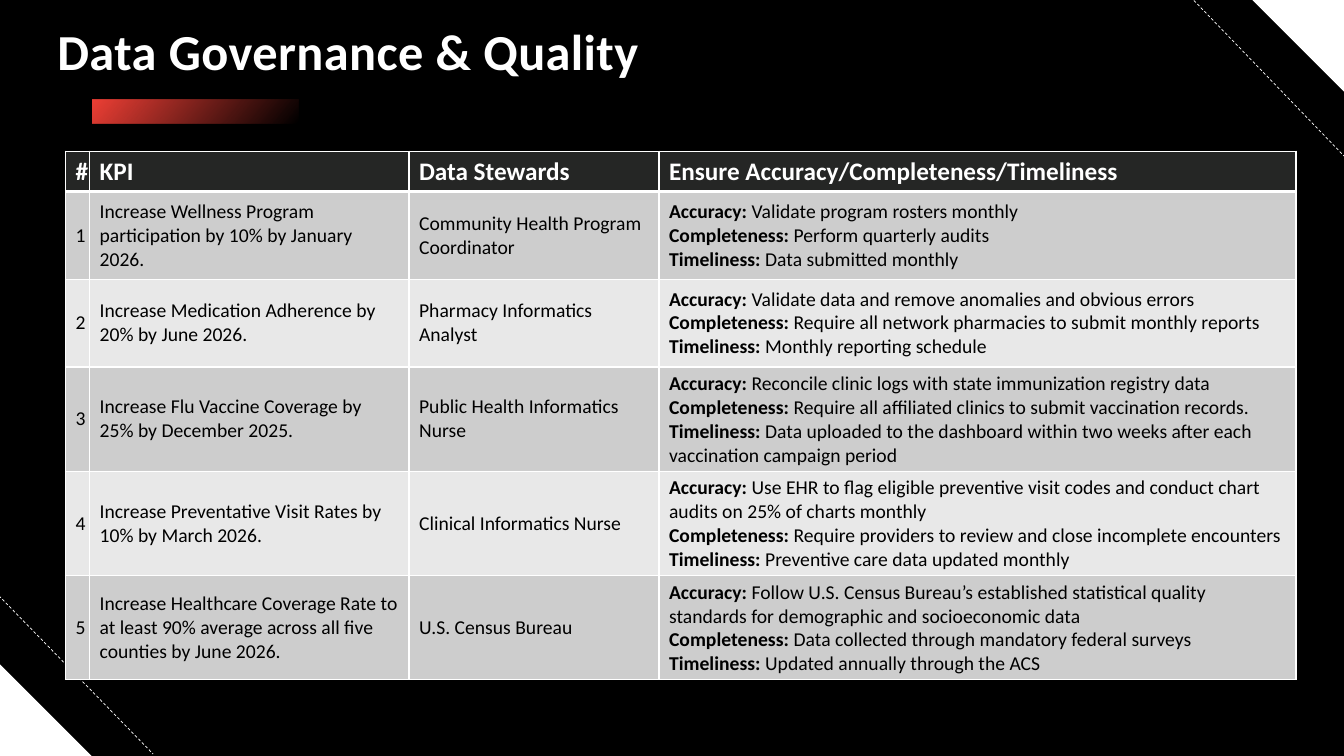
from lxml.etree import SubElement
from pptx import Presentation
from pptx.dml.color import RGBColor as RGB
from pptx.enum.dml import MSO_LINE as Dash
from pptx.enum.shapes import MSO_CONNECTOR as Link, MSO_SHAPE as Form
from pptx.enum.text import MSO_ANCHOR as Anchor, MSO_AUTO_SIZE as Auto, PP_ALIGN as Align
from pptx.oxml import parse_xml
from pptx.oxml.ns import nsdecls, qn
from pptx.util import Cm, Pt

WIDE, HIGH = 33.87, 19.05
HUES = {"back": "000000", "white": "FFFFFF", "red": "EE4036", "head": "252625",
        "dark": "CDCDCD", "light": "E8E8E8", "ink": "000000"}
COLS = [0.59, 8.05, 6.3, 16.05]
HEADS = ["#", "KPI", "Data Stewards", "Ensure Accuracy/Completeness/Timeliness"]
TESTS = ["Accuracy: ", "Completeness: ", "Timeliness: "]
GOALS = [
    ("Increase Wellness Program participation by 10% by January 2026.",
     "Community Health Program Coordinator",
     ["Validate program rosters monthly",
      "Perform quarterly audits",
      "Data submitted monthly"]),
    ("Increase Medication Adherence by 20% by June 2026.",
     "Pharmacy Informatics Analyst",
     ["Validate data and remove anomalies and obvious errors",
      "Require all network pharmacies to submit monthly reports",
      "Monthly reporting schedule"]),
    ("Increase Flu Vaccine Coverage by 25% by December 2025.",
     "Public Health Informatics Nurse",
     ["Reconcile clinic logs with state immunization registry data",
      "Require all affiliated clinics to submit vaccination records.",
      "Data uploaded to the dashboard within two weeks after each vaccination campaign period"]),
    ("Increase Preventative Visit Rates by 10% by March 2026.",
     "Clinical Informatics Nurse",
     ["Use EHR to flag eligible preventive visit codes and conduct chart audits on 25% of charts monthly",
      "Require providers to review and close incomplete encounters",
      "Preventive care data updated monthly"]),
    ("Increase Healthcare Coverage Rate to at least 90% average across all five counties by June 2026.",
     "U.S. Census Bureau",
     ["Follow U.S. Census Bureau’s established statistical quality standards for demographic and socioeconomic data",
      "Data collected through mandatory federal surveys",
      "Updated annually through the ACS"]),
]


def hue(name):
    return RGB.from_string(HUES[name])


def style(font, tint, **form):
    font.color.rgb = hue(tint)
    for key, val in {"name": "Calibri", **form}.items():
        setattr(font, key, val)


def add_form(slide, kind, box):
    form = slide.shapes.add_shape(kind, *map(Cm, box))
    form.shadow.inherit = False
    form.line.fill.background()
    return form


def draw_edge(slide, box, turn, ends):
    """Place one white corner and the dashed line beside it."""
    form = add_form(slide, Form.RIGHT_TRIANGLE, box)
    form.fill.solid()
    form.fill.fore_color.rgb = hue("white")
    form.rotation = turn
    line = slide.shapes.add_connector(Link.STRAIGHT, *map(Cm, ends))
    line.line.color.rgb = hue("white")
    line.line.width = Pt(0.5)
    line.line.dash_style = Dash.DASH
    SubElement(line._element.spPr, qn("a:effectLst"))


def draw_bar(slide, box):
    """Place the red bar that fades out to the right."""
    fill = add_form(slide, Form.RECTANGLE, box).fill
    fill.gradient()
    fill.gradient_angle = 320
    for stop, spot in zip(fill.gradient_stops, (0, 0.99)):
        stop.position = spot
        stop.color.rgb = hue("red")
    tint = stop._gs.find(qn("a:srgbClr"))
    SubElement(tint, qn("a:alpha"), val="0")


def draw_title(slide, box, text):
    title = slide.shapes.title
    title.left, title.top, title.width, title.height = map(Cm, box)
    frame = title.text_frame
    frame.auto_size = Auto.SHAPE_TO_FIT_TEXT
    frame.vertical_anchor = Anchor.MIDDLE
    para = frame.paragraphs[0]
    para.alignment = Align.LEFT
    para.line_spacing = 1.0
    run = para.add_run()
    run.text = text
    style(run.font, "white", size=Pt(36), bold=True)
    run.font._element.set("spc", "30")


def fill_cell(cell, parts, tint, ink, size, sides):
    """Write the (text, bold) parts, a None part being a line break."""
    props = cell._tc.get_or_add_tcPr()
    for side, width in sides.items():
        props.append(parse_xml(
            f'<a:ln{side} {nsdecls("a")} w="{Pt(width)}"><a:solidFill>'
            f'<a:srgbClr val="{HUES["white"]}"/></a:solidFill></a:ln{side}>'))
    cell.fill.solid()
    cell.fill.fore_color.rgb = hue(tint)
    cell.vertical_anchor = Anchor.MIDDLE
    para = cell.text_frame.paragraphs[0]
    for part in parts:
        if part is None:
            para.add_line_break()
            continue
        run = para.add_run()
        run.text, bold = part
        style(run.font, ink, size=Pt(size), bold=bold)
    return para


def list_tests(notes):
    parts = []
    for test, note in zip(TESTS, notes):
        parts += [None, (test, True), (note, False)]
    return parts[1:]


def draw_table(slide, box):
    rows = [[[(head, True)] for head in HEADS]]
    for num, (goal, lead, notes) in enumerate(GOALS, 1):
        plain = [[(text, False)] for text in (str(num), goal, lead)]
        rows.append(plain + [list_tests(notes)])
    table = slide.shapes.add_table(len(rows), len(COLS), *map(Cm, box)).table
    for col, width in zip(table.columns, COLS):
        col.width = Cm(width)
    for r, row in enumerate(rows):
        table.rows[r].height = Cm(2.21 if r else 0.97)
        tint = ("dark" if r % 2 else "light") if r else "head"
        ink, size = ("ink", 14) if r else ("white", 18)
        sides = {"L": 1, "R": 1, "T": 3 if r == 1 else 1, "B": 1 if r else 3}
        for c, parts in enumerate(row):
            para = fill_cell(table.cell(r, c), parts, tint, ink, size, sides)
            para.alignment = Align.LEFT if c else Align.CENTER


def main():
    deck = Presentation()
    deck.slide_width, deck.slide_height = Cm(WIDE), Cm(HIGH)
    slide = deck.slides.add_slide(deck.slide_layouts[5])
    slide.background.fill.solid()
    slide.background.fill.fore_color.rgb = hue("back")
    side = 2.31
    draw_edge(slide, (0, HIGH - side, side, side), 0, (-0.03, 15.01, 3.86, 19))
    draw_edge(slide, (WIDE - side, 0, side, side), 180, (30, -0.08, 33.88, 3.94))
    draw_bar(slide, (2.34, 2.5, 5.18, 0.6))
    draw_title(slide, (1.19, 0.36, 22.61, 1.8), "Data Governance & Quality")
    draw_table(slide, (1.65, 3.81, sum(COLS), 13.31))
    deck.save("out.pptx")


if __name__ == "__main__":
    main()
